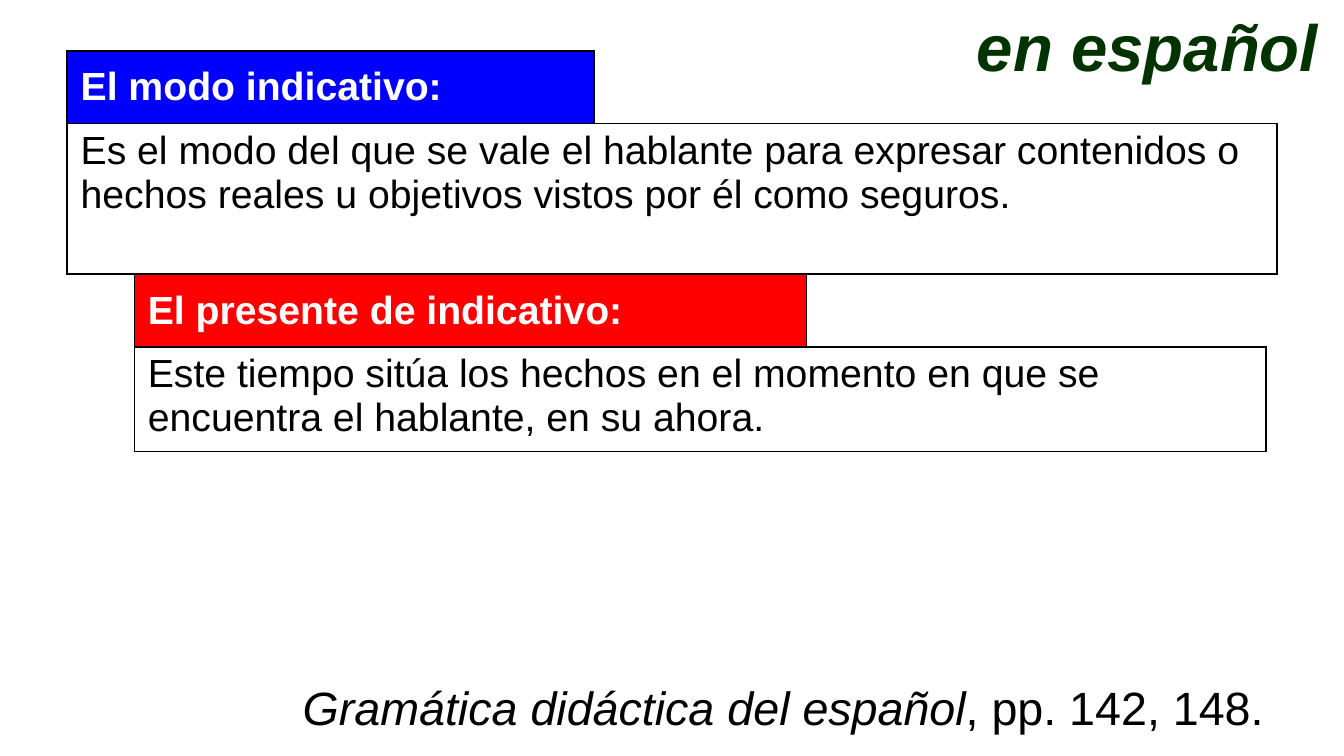
from dataclasses import dataclass

from lxml import etree
from pptx import Presentation, util as u
from pptx.dml.color import RGBColor
from pptx.enum import text
from pptx.oxml.ns import qn


@dataclass(frozen=True)
class Theme:
    """Colours, font and type sizes of the slide."""
    font: str = "Arial"
    black: str = "000000"
    white: str = "FFFFFF"
    blue: str = "0000FF"
    red: str = "FF0000"
    green: str = "003300"
    body: float = 21
    source: float = 25
    title: float = 35


THEME = Theme()
SIDES = "LRTB"


def apply_format(target, values):
    """Set every attribute named in values on target."""
    for name, value in values.items():
        setattr(target, name, value)


def add_run(paragraph, words, size, color, **styles):
    """Append a formatted run to a paragraph."""
    run = paragraph.add_run()
    run.text = words
    apply_format(run.font, {"name": THEME.font, "size": u.Pt(size), **styles})
    run.font.color.rgb = RGBColor.from_string(color)


def set_borders(cell, visible):
    """Draw black one-point lines on the visible sides and none elsewhere."""
    properties = cell._tc.get_or_add_tcPr()
    for index, side in enumerate(SIDES):
        line = etree.Element(qn(f"a:ln{side}"), w=str(u.Pt(1)))
        if side in visible:
            fill = etree.SubElement(line, qn("a:solidFill"))
            etree.SubElement(fill, qn("a:srgbClr"), val=THEME.black)
        else:
            etree.SubElement(line, qn("a:noFill"))
        properties.insert(index, line)


def fill_cell(cell, words, color, bold, anchor):
    """Write the words of a cell with its margins."""
    apply_format(cell, {
        "vertical_anchor": anchor,
        "margin_left": u.Inches(0.1), "margin_right": u.Inches(0.1),
        "margin_top": u.Inches(0.04), "margin_bottom": u.Inches(0.04),
    })
    add_run(cell.text_frame.paragraphs[0], words, THEME.body, color, bold=bold)


def add_definition(slide, place, widths, heights, term, meaning, color):
    """Add a table with a coloured term above its full-width meaning."""
    left, top = place
    box = map(u.Inches, (left, top, sum(widths), sum(heights)))
    table = slide.shapes.add_table(2, 2, *box).table
    apply_format(table, {"first_row": False, "horz_banding": False})
    for column, width in zip(table.columns, widths):
        column.width = u.Inches(width)
    for row, height in zip(table.rows, heights):
        row.height = u.Inches(height)
    term_cell, blank_cell, meaning_cell, end_cell = table.iter_cells()
    meaning_cell.merge(end_cell)
    for cell, visible in zip(table.iter_cells(), (SIDES, "LB", SIDES, SIDES)):
        cell.fill.background()
        set_borders(cell, visible)
    term_cell.fill.solid()
    term_cell.fill.fore_color.rgb = RGBColor.from_string(color)
    fill_cell(term_cell, term, THEME.white, True, text.MSO_ANCHOR.MIDDLE)
    fill_cell(meaning_cell, meaning, THEME.black, False, text.MSO_ANCHOR.TOP)


def add_label(slide, box, runs, wrap, align):
    """Add a one-paragraph text box made of formatted runs."""
    frame = slide.shapes.add_textbox(*map(u.Inches, box)).text_frame
    apply_format(frame, {"word_wrap": wrap,
                         "auto_size": text.MSO_AUTO_SIZE.SHAPE_TO_FIT_TEXT})
    paragraph = frame.paragraphs[0]
    paragraph.alignment = align
    for words, size, color, styles in runs:
        add_run(paragraph, words, size, color, **styles)


def main():
    """Build the slide and save it."""
    deck = Presentation()
    apply_format(deck, {"slide_width": u.Inches(10),
                        "slide_height": u.Inches(10 * 9 / 16)})
    slide = deck.slides.add_slide(deck.slide_layouts[6])
    add_definition(
        slide, (0.5, 0.38), (3.92, 5.08), (0.54, 1.12), "El modo indicativo:",
        "Es el modo del que se vale el hablante para expresar contenidos o "
        "hechos reales u objetivos vistos por él como seguros.", THEME.blue)
    add_label(slide, (0.5, 5, 9, 0.52), [
        ("Gramática didáctica del español", THEME.source, THEME.black, {"italic": True}),
        (", pp. 142, 148.", THEME.source, THEME.black, {"italic": False}),
    ], True, text.PP_ALIGN.RIGHT)
    add_definition(
        slide, (1, 2.04), (5, 3.42), (0.54, 0.77), "El presente de indicativo:",
        "Este tiempo sitúa los hechos en el momento en que se "
        "encuentra el hablante, en su ahora.", THEME.red)
    add_label(slide, (7.17, 0, 2.89, 0.69), [
        ("en español", THEME.title, THEME.green, {"bold": True, "italic": True}),
    ], False, text.PP_ALIGN.LEFT)
    deck.save("out.pptx")


if __name__ == "__main__":
    main()
